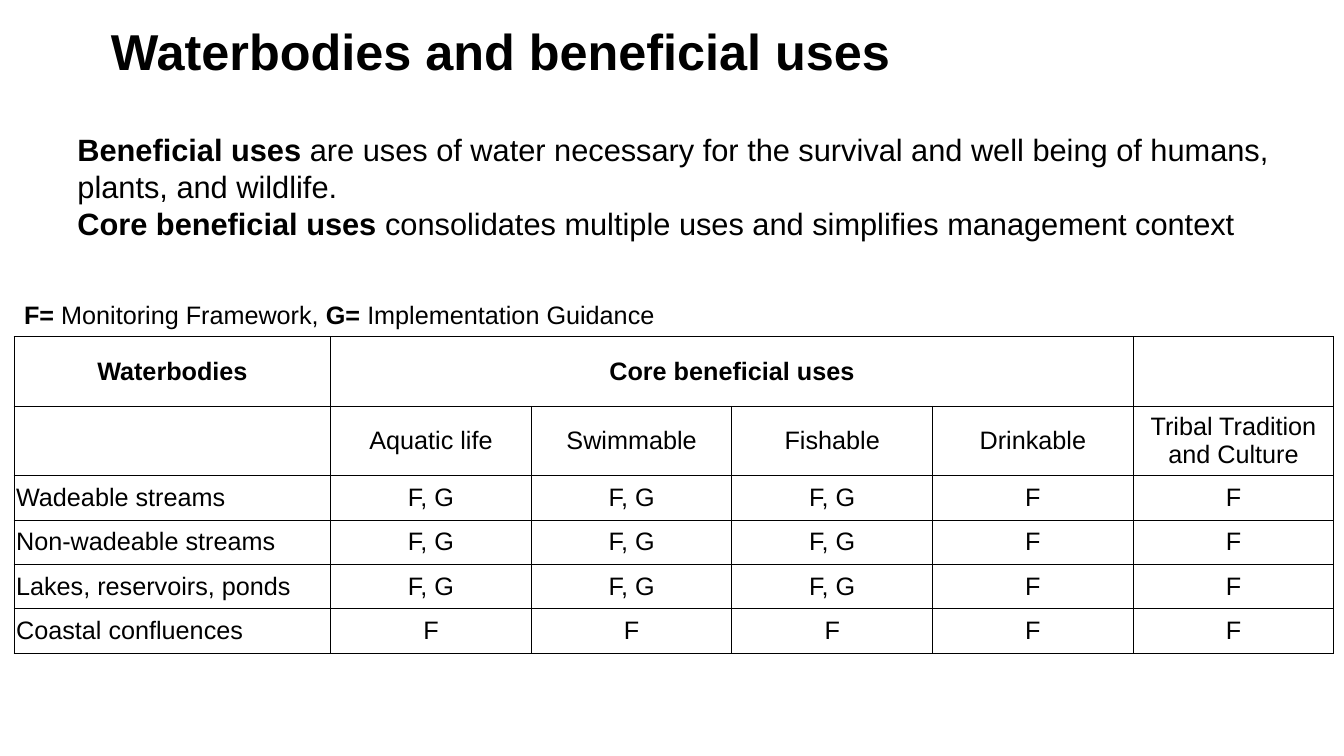
from dataclasses import dataclass

from lxml.etree import SubElement
from pptx import Presentation
from pptx.dml.color import RGBColor
from pptx.enum.text import MSO_ANCHOR as Anchor, MSO_AUTO_SIZE as AutoSize, PP_ALIGN as Align
from pptx.oxml.ns import qn
from pptx.slide import Slide
from pptx.table import _Cell as Cell
from pptx.text.text import TextFrame, _Paragraph as Paragraph
from pptx.util import Inches, Pt


@dataclass(frozen=True)
class Theme:
    font: str = "Arial"
    ink: str = "000000"
    title_size: int = 36
    body_size: int = 22
    table_size: int = 18
    border: float = 0.75


@dataclass(frozen=True)
class Phrase:
    text: str
    bold: bool = False


@dataclass(frozen=True)
class Passage:
    box: tuple[float, float, float, float]
    size: int
    paragraphs: list[list[Phrase]]


THEME = Theme()

DEFINITIONS = Passage((0.67, 1.25, 12.67, 1.58), THEME.body_size, [
    [Phrase("Beneficial uses ", True),
     Phrase("are uses of water necessary for the survival and well being of "
            "humans, plants, and wildlife.")],
    [Phrase("Core beneficial uses ", True),
     Phrase("consolidates multiple uses and simplifies management context")],
])
LEGEND = Passage((0.14, 2.92, 10.75, 0.77), THEME.table_size, [
    [Phrase("F=", True), Phrase(" Monitoring Framework, "),
     Phrase("G=", True), Phrase(" Implementation Guidance")],
])

USES_TABLE = [
    ["Waterbodies", "Core beneficial uses", "", "", "", ""],
    ["", "Aquatic life", "Swimmable", "Fishable", "Drinkable", "Tribal Tradition and Culture"],
    ["Wadeable streams", "F, G", "F, G", "F, G", "F", "F"],
    ["Non-wadeable streams", "F, G", "F, G", "F, G", "F", "F"],
    ["Lakes, reservoirs, ponds", "F, G", "F, G", "F, G", "F", "F"],
    ["Coastal confluences", "F", "F", "F", "F", "F"],
]
COLUMN_WIDTHS = [3.14] + [1.99] * 5
ROW_HEIGHTS = [0.69] * 2 + [0.44] * 4
HEADER_ROWS = 2


def add_phrase(paragraph: Paragraph, phrase: Phrase, size: int) -> None:
    run = paragraph.add_run()
    run.text = phrase.text
    font_format = {"name": THEME.font, "size": Pt(size), "bold": phrase.bold}
    for attribute, value in font_format.items():
        setattr(run.font, attribute, value)
    run.font.color.rgb = RGBColor.from_string(THEME.ink)


def write_paragraphs(frame: TextFrame, paragraphs: list[list[Phrase]], size: int) -> None:
    for index, phrases in enumerate(paragraphs):
        paragraph = frame.add_paragraph() if index else frame.paragraphs[0]
        for phrase in phrases:
            add_phrase(paragraph, phrase, size)


def add_title(slide: Slide, text: str) -> None:
    title = slide.shapes.title
    placement = {"left": 0, "top": 0, "width": 13.33, "height": 1}
    for attribute, value in placement.items():
        setattr(title, attribute, Inches(value))
    frame = title.text_frame
    frame_format = {"margin_left": Inches(1.1), "vertical_anchor": Anchor.MIDDLE,
                    "word_wrap": True, "auto_size": AutoSize.NONE}
    for attribute, value in frame_format.items():
        setattr(frame, attribute, value)
    frame.paragraphs[0].alignment = Align.LEFT
    add_phrase(frame.paragraphs[0], Phrase(text, True), THEME.title_size)


def add_passage(slide: Slide, passage: Passage) -> None:
    frame = slide.shapes.add_textbox(*map(Inches, passage.box)).text_frame
    frame.word_wrap = True
    write_paragraphs(frame, passage.paragraphs, passage.size)


def outline_cell(cell: Cell) -> None:
    """Rule all four sides; the borders must precede the cell's fill."""
    properties = cell._tc.get_or_add_tcPr()
    for index, side in enumerate(("lnL", "lnR", "lnT", "lnB")):
        line = SubElement(properties, qn(f"a:{side}"), w=str(Pt(THEME.border)))
        fill = SubElement(line, qn("a:solidFill"))
        SubElement(fill, qn("a:srgbClr"), val=THEME.ink)
        properties.insert(index, line)


def fill_cell(cell: Cell, text: str, bold: bool, alignment: Align) -> None:
    cell_format = {"margin_left": Inches(0.02), "margin_right": Inches(0.02),
                   "margin_top": Inches(0.04), "margin_bottom": Inches(0.04),
                   "vertical_anchor": Anchor.MIDDLE}
    for attribute, value in cell_format.items():
        setattr(cell, attribute, value)
    cell.fill.background()
    outline_cell(cell)
    if text:
        paragraph = cell.text_frame.paragraphs[0]
        paragraph.alignment = alignment
        add_phrase(paragraph, Phrase(text, bold), THEME.table_size)


def add_uses_table(slide: Slide) -> None:
    table = slide.shapes.add_table(
        len(ROW_HEIGHTS), len(COLUMN_WIDTHS), Inches(0.14), Inches(3.34),
        Inches(sum(COLUMN_WIDTHS)), Inches(sum(ROW_HEIGHTS))).table
    table.first_row = table.horz_banding = False
    for column, width in zip(table.columns, COLUMN_WIDTHS):
        column.width = Inches(width)
    for row, height in zip(table.rows, ROW_HEIGHTS):
        row.height = Inches(height)
    for row_index, texts in enumerate(USES_TABLE):
        for column_index, text in enumerate(texts):
            is_waterbody = row_index >= HEADER_ROWS and column_index == 0
            fill_cell(table.cell(row_index, column_index), text, row_index == 0,
                      Align.LEFT if is_waterbody else Align.CENTER)
    table.cell(0, 1).merge(table.cell(0, 4))


def main() -> None:
    deck = Presentation()
    deck.slide_width, deck.slide_height = Inches(13.33), Inches(7.5)
    slide = deck.slides.add_slide(deck.slide_layouts[5])
    add_title(slide, "Waterbodies and beneficial uses")
    add_passage(slide, DEFINITIONS)
    add_uses_table(slide)
    add_passage(slide, LEGEND)
    deck.save("out.pptx")


if __name__ == "__main__":
    main()
